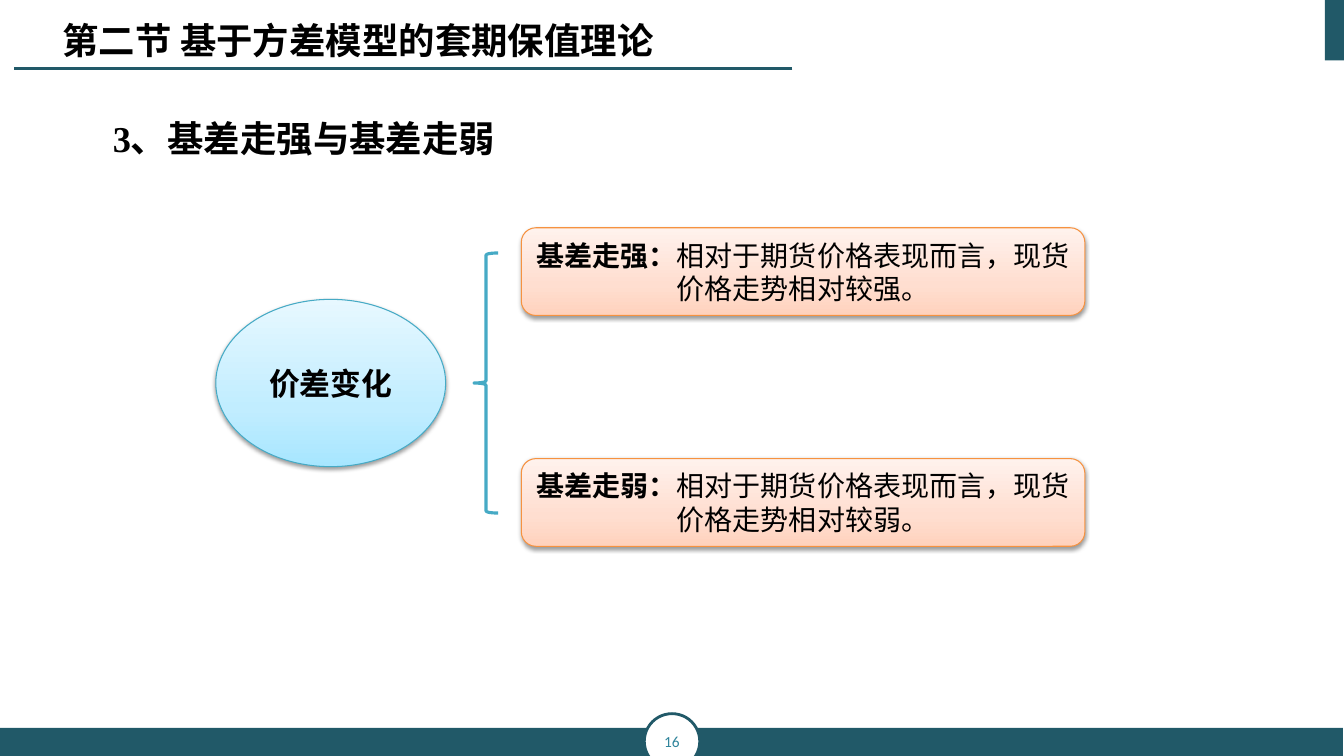
import pptx
import pptx.util
import pptx.dml.color
import pptx.enum.shapes
import pptx.enum.text
import pptx.oxml.ns
from lxml import etree

Inches = pptx.util.Inches
Pt = pptx.util.Pt
SHAPE = pptx.enum.shapes.MSO_SHAPE
ALIGN = pptx.enum.text.PP_ALIGN
ANCHOR = pptx.enum.text.MSO_ANCHOR
qn = pptx.oxml.ns.qn

COLORS = {"teal": "215968", "number": "31859C", "white": "FFFFFF", "black": "000000",
          "blue": "46AAC5", "orange": "F69240"}
BLUE_STOPS = {0: "A7E6FF", 35: "C1EDFF", 100: "E7F8FF"}
PEACH_STOPS = {0: "FFD2BD", 35: "FFDED0", 100: "FFF2ED"}
EAST_ASIAN_FONT = "Calibri"


def rgb(name):
    return pptx.dml.color.RGBColor.from_string(COLORS[name])


def add_span(para, text, size, font, color="black", bold=False):
    span = para.add_run()
    span.text = text
    for key, value in {"size": Pt(size), "name": font, "bold": bold}.items():
        setattr(span.font, key, value)
    span.font.color.rgb = rgb(color)
    latin = span.font._element.find(qn("a:latin"))
    east_asian = etree.Element(qn("a:ea"), typeface=EAST_ASIAN_FONT)
    latin.addnext(east_asian)


def format_frame(frame, **values):
    for key, value in {"word_wrap": True, **values}.items():
        setattr(frame, key, value)
    return frame.paragraphs[0]


def add_shape(page, kind, place, line=None, width=0.75, fill=None):
    shape = page.shapes.add_shape(kind, *map(Inches, place))
    shape.shadow.inherit = False
    if fill:
        shape.fill.solid()
        shape.fill.fore_color.rgb = rgb(fill)
    else:
        shape.fill.background()
    if line:
        shape.line.color.rgb = rgb(line)
        shape.line.width = Pt(width)
    else:
        shape.line.fill.background()
    return shape


def add_glossy_shape(page, kind, place, line, stops):
    """Shape with an upward gradient and a soft shadow below."""
    shape = add_shape(page, kind, place, line)
    shape.fill.gradient()
    shape.fill.gradient_angle = 90
    properties = shape._element.spPr
    stop_list = properties.find(".//" + qn("a:gsLst"))
    for stop in list(stop_list):
        stop_list.remove(stop)
    for position, color in stops.items():
        stop = etree.SubElement(stop_list, qn("a:gs"), pos=str(position * 1000))
        etree.SubElement(stop, qn("a:srgbClr"), val=color)
    shadow = etree.SubElement(
        properties.find(qn("a:effectLst")), qn("a:outerShdw"), blurRad=str(Pt(3.1)),
        dist=str(Pt(1.6)), dir="5400000", rotWithShape="0")
    shade = etree.SubElement(shadow, qn("a:srgbClr"), val=COLORS["black"])
    etree.SubElement(shade, qn("a:alpha"), val="38000")
    return shape


def centred_para(shape, **values):
    para = format_frame(shape.text_frame, vertical_anchor=ANCHOR.MIDDLE, **values)
    para.alignment = ALIGN.CENTER
    return para


def add_rule(page, start, end):
    rule = page.shapes.add_connector(
        pptx.enum.shapes.MSO_CONNECTOR.STRAIGHT, *map(Inches, start + end))
    rule.line.color.rgb = rgb("teal")
    rule.line.width = Pt(1.5)
    etree.SubElement(rule._element.spPr, qn("a:effectLst"))


def add_title(page, text):
    title = page.shapes.title
    place = dict(left=0.52, top=0.13, width=7.8, height=0.54)
    for key, value in place.items():
        setattr(title, key, Inches(value))
    para = format_frame(title.text_frame, vertical_anchor=ANCHOR.TOP,
                        auto_size=pptx.enum.text.MSO_AUTO_SIZE.NONE)
    para.alignment = ALIGN.LEFT
    add_span(para, text, 26, "Noto Sans CJK SC", bold=True)


def add_heading(page, text):
    box = page.shapes.add_textbox(*map(Inches, (0.52, 0.89, 5.12, 0.89)))
    para = format_frame(box.text_frame)
    para.line_spacing = 1.5
    para._p.get_or_add_pPr().set("indent", str(Inches(0.5)))
    add_span(para, text, 26, "Times New Roman", bold=True)


def add_definition(page, top, term, meaning):
    card = add_glossy_shape(page, SHAPE.ROUNDED_RECTANGLE, (5.17, top, 5.59, 0.87),
                            "orange", PEACH_STOPS)
    para = centred_para(card)
    add_span(para, term, 20, "Times New Roman", bold=True)
    add_span(para, meaning, 20, "Times New Roman")


def main():
    deck = pptx.Presentation()
    deck.slide_width, deck.slide_height = Inches(13.33), Inches(7.5)
    page = deck.slides.add_slide(deck.slide_layouts[5])

    # Page frame: corner tab, footer band, page number and title rule
    add_shape(page, SHAPE.RECTANGLE, (13.14, 0, 0.2, 0.6), fill="teal")
    add_shape(page, SHAPE.RECTANGLE, (0, 7.22, 13.32, 0.28), fill="teal")
    badge = add_shape(page, SHAPE.OVAL, (6.39, 7.08, 0.55, 0.55), "teal", 2, "white")
    number = centred_para(badge, margin_left=0, margin_right=0)
    add_span(number, "16", 11, "Calibri", "number")
    add_rule(page, (7.86, 0.68), (0.14, 0.68))

    # Titles
    add_title(page, "第二节 基于方差模型的套期保值理论")
    add_heading(page, "3、基差走强与基差走弱")

    # Diagram: topic, brace and the two cases
    topic = add_glossy_shape(page, SHAPE.OVAL, (2.14, 2.97, 2.28, 1.66), "blue", BLUE_STOPS)
    add_span(centred_para(topic), "价差变化", 22, "Calibri", bold=True)
    add_shape(page, SHAPE.LEFT_BRACE, (4.7, 2.51, 0.24, 2.58), "blue", 2.25)
    for top, trend in ((2.26, "强"), (4.55, "弱")):
        add_definition(page, top, f"基差走{trend}：",
                       f"相对于期货价格表现而言，现货价格走势相对较{trend}。")

    deck.save("out.pptx")


if __name__ == "__main__":
    main()
